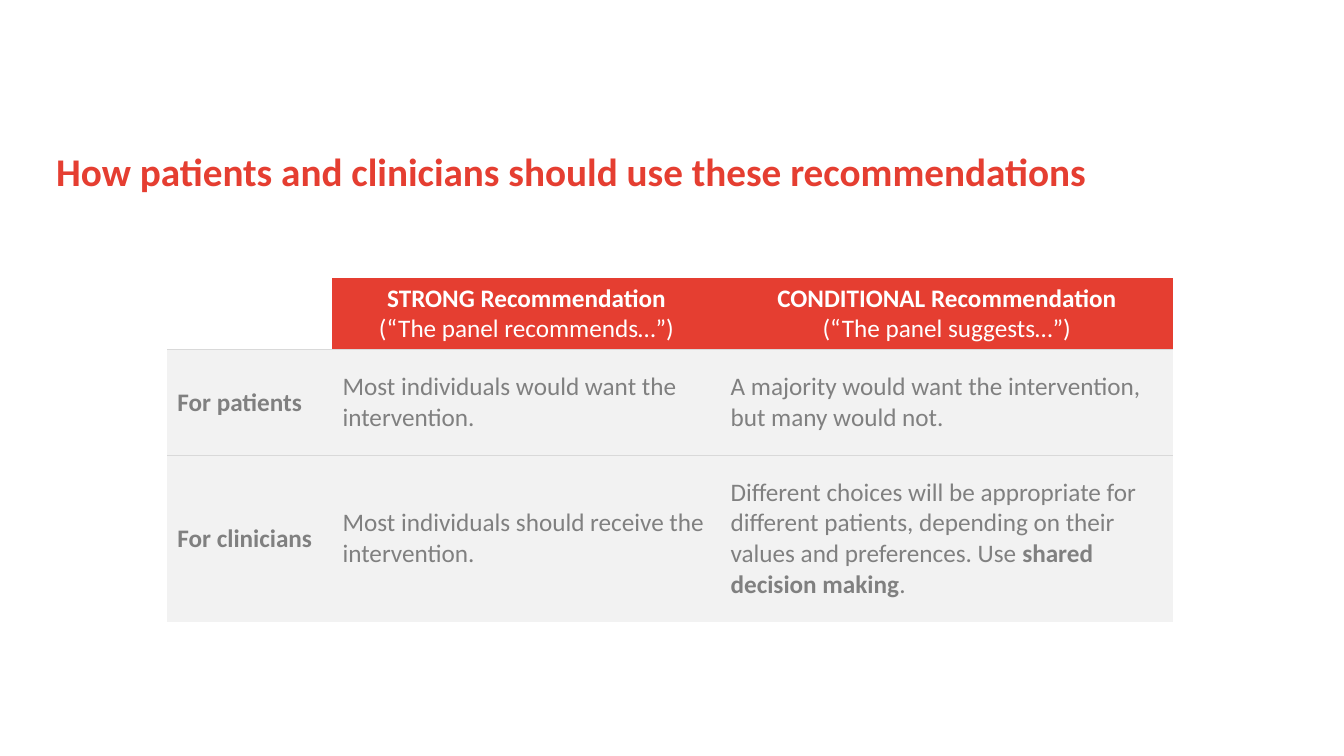
import pptx
import pptx.util
import pptx.dml.color
import pptx.enum.text
import pptx.oxml
from pptx.oxml.ns import nsdecls

Pt = pptx.util.Pt
RGB = pptx.dml.color.RGBColor
ALIGN = pptx.enum.text.PP_ALIGN
ANCHOR = pptx.enum.text.MSO_ANCHOR

RED = RGB(0xE5, 0x3E, 0x31)
WHITE = RGB(0xFF, 0xFF, 0xFF)
GREY = RGB(0x80, 0x80, 0x80)
PALE = RGB(0xF2, 0xF2, 0xF2)
RULE = RGB(0xD9, 0xD9, 0xD9)
FONT = "Calibri"

# Content: a cell is a list of paragraphs, a paragraph a list of (text, bold)
TITLE = "How patients and clinicians should use these recommendations"
ROWS = [
    [
        [],
        [[("STRONG Recommendation", True)],
         [("(“The panel recommends…”)", False)]],
        [[("CONDITIONAL Recommendation", True)],
         [("(“The panel suggests…”)", False)]],
    ],
    [
        [[("For patients", True)]],
        [[("Most individuals would want the intervention.", False)]],
        [[("A majority would want the intervention, but many would not.",
           False)]],
    ],
    [
        [[("For clinicians", True)]],
        [[("Most individuals should receive the intervention.", False)]],
        [[("Different choices will be appropriate for different patients, "
           "depending on their values and preferences. Use ", False),
          ("shared decision making", True),
          (".", False)]],
    ],
]
WIDTHS = [118, 277.2, 323.3]
HEIGHTS = [51, 75.6, 118.8]
LEFT, TOP = 119.5, 198.7


def style(para, size, color, bold=None):
    font = para.font
    font.name, font.size, font.bold = FONT, Pt(size), bold
    font.color.rgb = color


def border(cell, side, color=None):
    if color is None:
        fill = "<a:noFill/>"
    else:
        fill = f'<a:solidFill><a:srgbClr val="{color}"/></a:solidFill>'
    line = f'<a:ln{side} {nsdecls("a")} w="{Pt(1)}">{fill}</a:ln{side}>'
    cell._tc.get_or_add_tcPr().append(pptx.oxml.parse_xml(line))


def write(frame, paras, color, align):
    for i, runs in enumerate(paras):
        para = frame.paragraphs[0] if i == 0 else frame.add_paragraph()
        para.alignment = align
        style(para, 18, color, runs[0][1] if len(runs) == 1 else None)
        for text, bold in runs:
            run = para.add_run()
            run.text = text
            if len(runs) > 1:
                run.font.bold = bold


deck = pptx.Presentation()
deck.slide_width, deck.slide_height = Pt(960), Pt(540)
slide = deck.slides.add_slide(deck.slide_layouts[6])

# Title
box = slide.shapes.add_textbox(Pt(33.1), Pt(105.8), Pt(864), Pt(56.2))
box.text_frame.word_wrap = True
head = box.text_frame.paragraphs[0]
head.text = TITLE
head.line_spacing = 0.9
style(head, 28, RED, True)

# Table
table = slide.shapes.add_table(
    len(ROWS), len(WIDTHS), Pt(LEFT), Pt(TOP),
    Pt(sum(WIDTHS)), Pt(sum(HEIGHTS))).table
table.first_row = table.horz_banding = False
for col, width in zip(table.columns, WIDTHS):
    col.width = Pt(width)
for row, height in zip(table.rows, HEIGHTS):
    row.height = Pt(height)

# Cells: red header, pale body, rules between rows only
last = len(ROWS) - 1
for r, row in enumerate(ROWS):
    for c, paras in enumerate(row):
        cell = table.cell(r, c)
        cell.vertical_anchor = ANCHOR.MIDDLE
        border(cell, "L")
        border(cell, "R")
        border(cell, "T", RULE if r > 0 else None)
        border(cell, "B", RULE if r < last else None)
        if paras:
            cell.fill.solid()
            cell.fill.fore_color.rgb = PALE if r else RED
        else:
            cell.fill.background()
        write(cell.text_frame, paras, GREY if r else WHITE,
              ALIGN.LEFT if r else ALIGN.CENTER)

deck.save("out.pptx")
